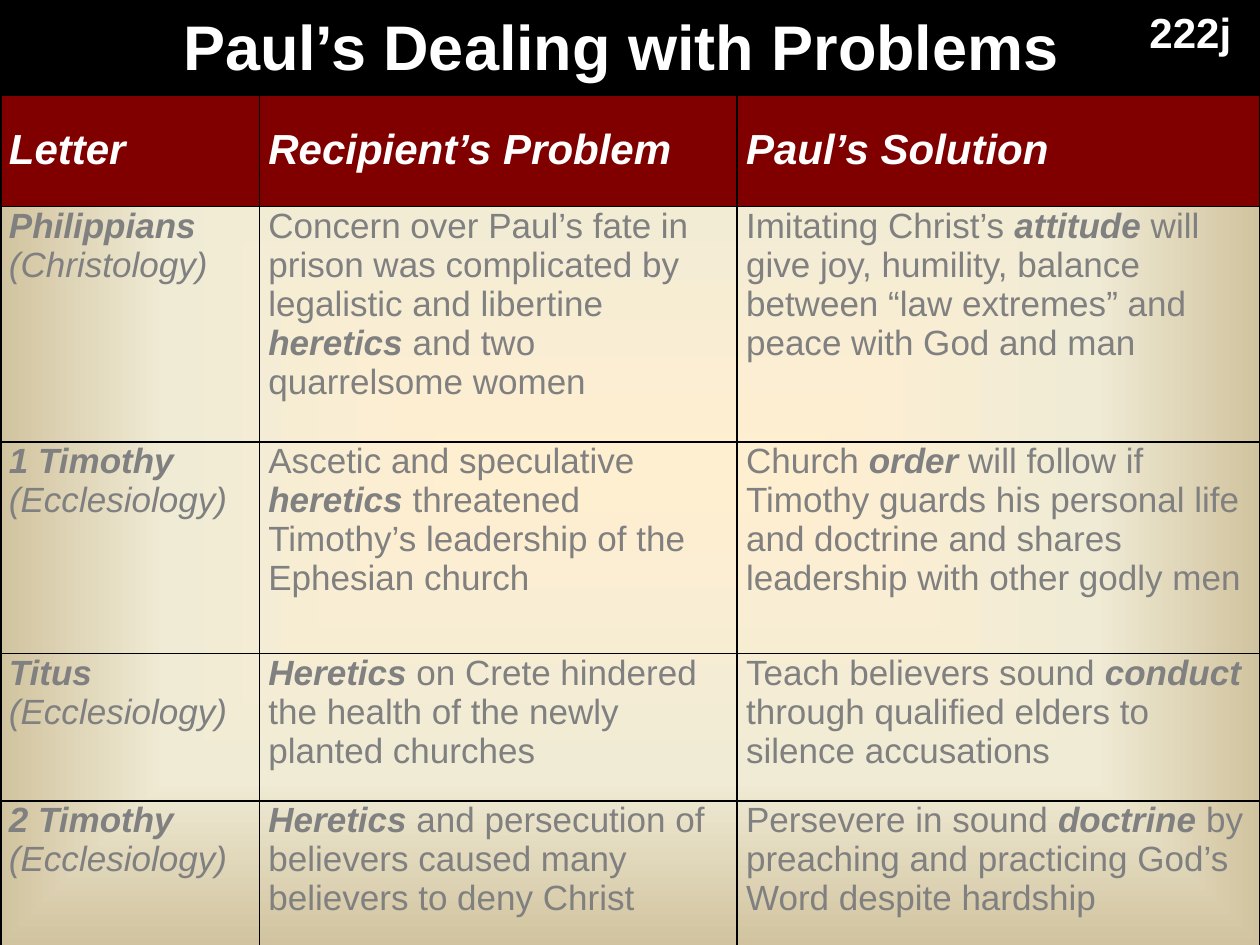
from dataclasses import dataclass

from pptx import Presentation
from pptx.dml.color import RGBColor
from pptx.enum.text import MSO_ANCHOR, PP_ALIGN
from pptx.oxml import parse_xml
from pptx.oxml.ns import nsdecls
from pptx.util import Cm, Pt


@dataclass(frozen=True)
class Theme:
    font: str = "Arial"
    black: str = "000000"
    white: str = "FFFFFF"
    maroon: str = "800000"
    gray: str = "808080"
    parchment: tuple = ((0, "FFEFD1"), (65, "F0EBD5"), (100, "D1C39F"))
    title_size: int = 36
    header_size: int = 24
    body_size: int = 20
    thin: float = 1
    thick: float = 2.25


THEME = Theme()
COLUMN_WIDTHS = (5.23, 9.63, 10.54)
ROW_HEIGHTS = (2.26, 4.75, 4.27, 2.97, 3.2)
HEADERS = ("Letter", "Recipient’s Problem", "Paul’s Solution")
LETTERS = (
    ("Philippians", "(Christology)",
     "Concern over Paul’s fate in prison was complicated by legalistic and "
     "libertine *heretics* and two quarrelsome women",
     "Imitating Christ’s *attitude* will give joy, humility, balance between "
     "“law extremes” and peace with God and man"),
    ("1 Timothy", "(Ecclesiology)",
     "Ascetic and speculative *heretics* threatened Timothy’s leadership of "
     "the Ephesian church",
     "Church *order* will follow if Timothy guards his personal life and "
     "doctrine and shares leadership with other godly men"),
    ("Titus", "(Ecclesiology)",
     "*Heretics* on Crete hindered the health of the newly planted churches",
     "Teach believers sound *conduct* through qualified elders to silence "
     "accusations"),
    ("2 Timothy", "(Ecclesiology)",
     "*Heretics* and persecution of believers caused many believers to deny "
     "Christ",
     "Persevere in sound *doctrine* by preaching and practicing God’s Word "
     "despite hardship"),
)


def add_span(para, text, size, color, bold=False, italic=False):
    span = para.add_run()
    span.text = text
    span.font.name = THEME.font
    span.font.size = Pt(size)
    span.font.bold = bold
    span.font.italic = italic
    span.font.color.rgb = RGBColor.from_string(color)


def add_marked_text(para, text):
    for index, part in enumerate(text.split("*")):
        strong = index % 2 == 1
        if part:
            add_span(para, part, THEME.body_size, THEME.gray, strong, strong)


def set_background(page):
    stops = "".join(
        f'<a:gs pos="{position * 1000}"><a:srgbClr val="{color}"/></a:gs>'
        for position, color in THEME.parchment)
    fill = page.background.fill
    fill.solid()
    properties = page._element.cSld.bg.bgPr
    properties.replace(properties[0], parse_xml(
        f'<a:gradFill {nsdecls("a")} rotWithShape="1"><a:gsLst>{stops}</a:gsLst>'
        '<a:path path="rect"><a:fillToRect l="50000" t="50000" r="50000" '
        'b="50000"/></a:path></a:gradFill>'))


def add_title(page):
    title = page.shapes.title
    title.left, title.top = Cm(0), Cm(-0.08)
    title.width, title.height = Cm(25.4), Cm(1.98)
    title.fill.solid()
    title.fill.fore_color.rgb = RGBColor.from_string(THEME.black)
    title.text_frame.vertical_anchor = MSO_ANCHOR.MIDDLE
    para = title.text_frame.paragraphs[0]
    para.alignment = PP_ALIGN.CENTER
    add_span(para, "Paul’s Dealing with Problems ", THEME.title_size,
             THEME.white, bold=True)


def add_page_code(page):
    box = page.shapes.add_textbox(Cm(22.3), Cm(0), Cm(2.77), Cm(1.27))
    box.text_frame.word_wrap = True
    para = box.text_frame.paragraphs[0]
    para.alignment = PP_ALIGN.RIGHT
    add_span(para, "222j", THEME.header_size, THEME.white, bold=True)


def set_borders(cell, row, column):
    widths = {
        "L": THEME.thin if column else THEME.thick,
        "R": THEME.thin,
        "T": THEME.thin if row else THEME.thick,
        "B": THEME.thin,
    }
    properties = cell._tc.get_or_add_tcPr()
    for side, width in widths.items():
        properties.append(parse_xml(
            f'<a:ln{side} {nsdecls("a")} w="{Pt(width)}"><a:solidFill>'
            f'<a:srgbClr val="{THEME.black}"/></a:solidFill></a:ln{side}>'))


def format_cell(cell, row, column):
    cell.margin_left = cell.margin_right = Cm(0.18)
    cell.margin_top = cell.margin_bottom = Cm(0)
    set_borders(cell, row, column)
    if row == 0:
        cell.vertical_anchor = MSO_ANCHOR.MIDDLE
        cell.fill.solid()
        cell.fill.fore_color.rgb = RGBColor.from_string(THEME.maroon)
    else:
        cell.vertical_anchor = MSO_ANCHOR.TOP
        cell.fill.background()


def fill_letter_row(cells, letter):
    name, topic, problem, solution = letter
    frame = cells[0].text_frame
    add_span(frame.paragraphs[0], name, THEME.body_size, THEME.gray, True, True)
    add_span(frame.add_paragraph(), topic, THEME.body_size, THEME.gray,
             italic=True)
    for cell, text in zip(cells[1:], (problem, solution)):
        add_marked_text(cell.text_frame.paragraphs[0], text)


def add_letter_table(page):
    table = page.shapes.add_table(
        len(ROW_HEIGHTS), len(COLUMN_WIDTHS), Cm(0), Cm(1.9),
        Cm(sum(COLUMN_WIDTHS)), Cm(sum(ROW_HEIGHTS))).table
    table.horz_banding = False
    for column, width in zip(table.columns, COLUMN_WIDTHS):
        column.width = Cm(width)
    for row_index, height in enumerate(ROW_HEIGHTS):
        row = table.rows[row_index]
        row.height = Cm(height)
        cells = list(row.cells)
        for column_index, cell in enumerate(cells):
            format_cell(cell, row_index, column_index)
        if row_index:
            fill_letter_row(cells, LETTERS[row_index - 1])
        else:
            for cell, text in zip(cells, HEADERS):
                add_span(cell.text_frame.paragraphs[0], text,
                         THEME.header_size, THEME.white, True, True)


def main():
    deck = Presentation()
    deck.slide_width, deck.slide_height = Cm(25.4), Cm(19.05)
    page = deck.slides.add_slide(deck.slide_layouts[5])
    set_background(page)
    add_letter_table(page)
    add_title(page)
    add_page_code(page)
    deck.save("out.pptx")


if __name__ == "__main__":
    main()
